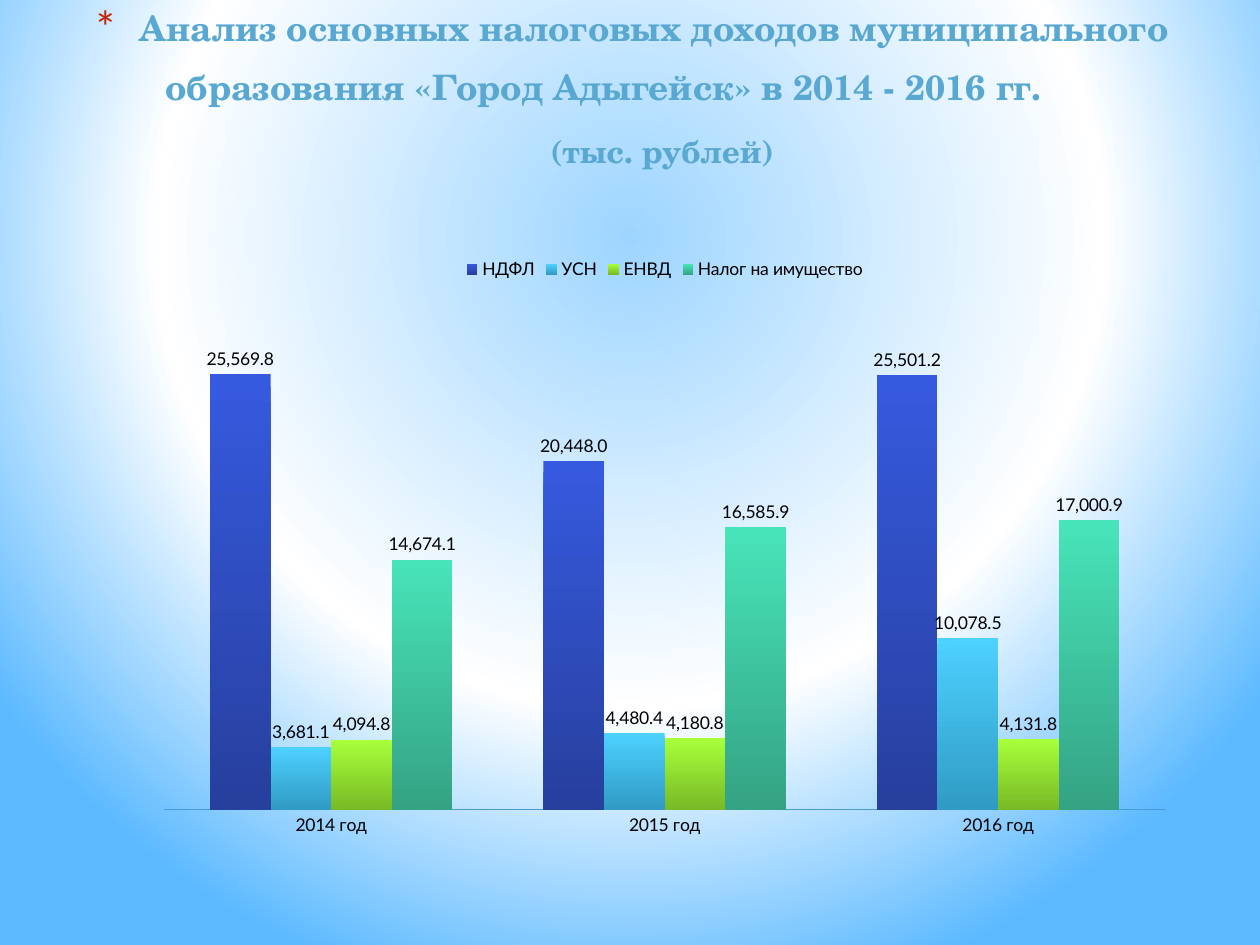
import pptx
import pptx.util
import pptx.chart.data
import pptx.dml.color
import pptx.enum.chart
import pptx.enum.text
import pptx.oxml
from pptx.oxml.ns import nsdecls

# Content
HEADING = ("Анализ основных налоговых доходов муниципального "
           "образования «Город Адыгейск» в 2014 - 2016 гг.")
UNITS = "(тыс. рублей)"
YEARS = ["2014 год", "2015 год", "2016 год"]
TAXES = [  # name, values by year, bar colours from top to bottom
    ("НДФЛ", (25569.8, 20448.0, 25501.2), ("365ADF", "273F9D")),
    ("УСН", (3681.1, 4480.4, 10078.5), ("4DD1FF", "309BC4")),
    ("ЕНВД", (4094.8, 4180.8, 4131.8), ("A8FF3A", "78BA26")),
    ("Налог на имущество", (14674.1, 16585.9, 17000.9), ("48E4B9", "34A384")),
]
THEME = {
    "heading_font": "TeX Gyre Schola", "chart_font": "Lato",
    "heading": "59A8D1", "bullet": "C3260C", "text": "000000", "axis": "4A9BCF",
    "heading_size": 20, "gap_size": 30, "units_size": 18, "chart_size": 10,
    "backdrop": [(0, "9ED5FF"), (60, "FFFFFF"), (100, "5BB9FF")],
}
WIDTH, HEIGHT = 10, 7.5
TITLE_BOX = (0.059, 0, 0.886, 0.197)  # shares of the slide
CHART_BOX = (0.114, 0.259, 0.827, 0.636)
PLOT_BOX = {"x": 0.02, "y": 0.09, "w": 0.96, "h": 0.85}  # shares of the chart
NUMBER_FORMAT = "#,##0.0"


def rgb(name):
    return pptx.dml.color.RGBColor.from_string(name)


def place(box):
    return [pptx.util.Inches(share * side)
            for share, side in zip(box, (WIDTH, HEIGHT) * 2)]


def paint_backdrop(slide):
    slide.background.fill.gradient()
    stops = "".join(f'<a:gs pos="{at * 1000}"><a:srgbClr val="{colour}"/></a:gs>'
                    for at, colour in THEME["backdrop"])
    radial = pptx.oxml.parse_xml(
        f'<a:gradFill {nsdecls("a")} rotWithShape="1"><a:gsLst>{stops}</a:gsLst>'
        '<a:path path="circle"><a:fillToRect l="20000" t="10000" r="20000" b="60000"/>'
        '</a:path></a:gradFill>')
    linear = slide.background._cSld.bg.bgPr.find(pptx.oxml.ns.qn("a:gradFill"))
    linear.getparent().replace(linear, radial)


def write_title(title):
    title.left, title.top, title.width, title.height = place(TITLE_BOX)
    frame = title.text_frame
    frame.word_wrap = True
    frame.auto_size = pptx.enum.text.MSO_AUTO_SIZE.NONE
    frame.vertical_anchor = pptx.enum.text.MSO_ANCHOR.TOP
    line = frame.paragraphs[0]
    line.alignment = pptx.enum.text.PP_ALIGN.CENTER

    def add_part(text, size):
        run = line.add_run()
        run.text = text
        run.font.name = THEME["heading_font"]
        run.font.size = pptx.util.Pt(THEME[size])
        run.font.bold = True
        run.font.color.rgb = rgb(THEME["heading"])
        return run

    add_part(HEADING, "heading_size")
    # Tracked space moves the second line to the left
    add_part(" ", "gap_size").font._element.set("spc", "5000")
    line.add_line_break()
    add_part(" ", "gap_size")
    add_part(UNITS, "units_size")

    # Hanging asterisk bullet
    props = line._p.get_or_add_pPr()
    indent = pptx.util.Inches(0.35)
    props.set("marL", str(indent))
    props.set("indent", str(-indent))
    for tag in (f'<a:buClr {nsdecls("a")}><a:srgbClr val="{THEME["bullet"]}"/></a:buClr>',
                f'<a:buSzPct {nsdecls("a")} val="128000"/>',
                f'<a:buFont {nsdecls("a")} typeface="{THEME["chart_font"]}"/>',
                f'<a:buChar {nsdecls("a")} char="*"/>'):
        props.append(pptx.oxml.parse_xml(tag))


def add_tax_chart(slide):
    data = pptx.chart.data.CategoryChartData(number_format=NUMBER_FORMAT)
    data.categories = YEARS
    for name, values, _ in TAXES:
        data.add_series(name, values)
    chart = slide.shapes.add_chart(
        pptx.enum.chart.XL_CHART_TYPE.COLUMN_CLUSTERED, *place(CHART_BOX), data).chart
    chart.has_title = False
    chart.font.name = THEME["chart_font"]
    chart.font.size = pptx.util.Pt(THEME["chart_size"])
    chart.font.color.rgb = rgb(THEME["text"])

    # Legend and axes
    chart.has_legend = True
    chart.legend.position = pptx.enum.chart.XL_LEGEND_POSITION.TOP
    chart.legend.include_in_layout = False
    years, amounts = chart.category_axis, chart.value_axis
    years.major_tick_mark = pptx.enum.chart.XL_TICK_MARK.NONE
    years.format.line.color.rgb = rgb(THEME["axis"])
    years.format.line.width = pptx.util.Pt(0.75)
    amounts.visible = False
    amounts.has_major_gridlines = False
    amounts.minimum_scale, amounts.maximum_scale = 0, 30000
    amounts.tick_labels.number_format = NUMBER_FORMAT
    amounts.tick_labels.number_format_is_linked = False

    # Bars
    plot = chart.plots[0]
    plot.vary_by_categories = False
    plot.gap_width, plot.overlap = 150, 0
    for bars, (_, _, shades) in zip(plot.series, TAXES):
        fill = bars.format.fill
        fill.gradient()
        fill.gradient_angle = 270
        for stop, shade in zip(fill.gradient_stops, shades):
            stop.color.rgb = rgb(shade)
        bars.invert_if_negative = False
        labels = bars.data_labels
        labels.show_value = True
        labels.number_format = NUMBER_FORMAT
        labels.number_format_is_linked = False
        labels.position = pptx.enum.chart.XL_LABEL_POSITION.OUTSIDE_END

    # Fixed plot area
    area = chart._chartSpace.chart.plotArea
    for old in area.findall(pptx.oxml.ns.qn("c:layout")):
        area.remove(old)
    modes = "".join(f'<c:{side}Mode val="edge"/>' for side in "xy")
    sizes = "".join(f'<c:{side} val="{share}"/>' for side, share in PLOT_BOX.items())
    area.insert(0, pptx.oxml.parse_xml(
        f'<c:layout {nsdecls("c")}><c:manualLayout><c:layoutTarget val="inner"/>'
        f'{modes}{sizes}</c:manualLayout></c:layout>'))


def main():
    deck = pptx.Presentation()
    deck.slide_width = pptx.util.Inches(WIDTH)
    deck.slide_height = pptx.util.Inches(HEIGHT)
    slide = deck.slides.add_slide(deck.slide_layouts.get_by_name("Title Only"))
    paint_backdrop(slide)
    write_title(slide.shapes.title)
    add_tax_chart(slide)
    deck.save("out.pptx")


if __name__ == "__main__":
    main()
